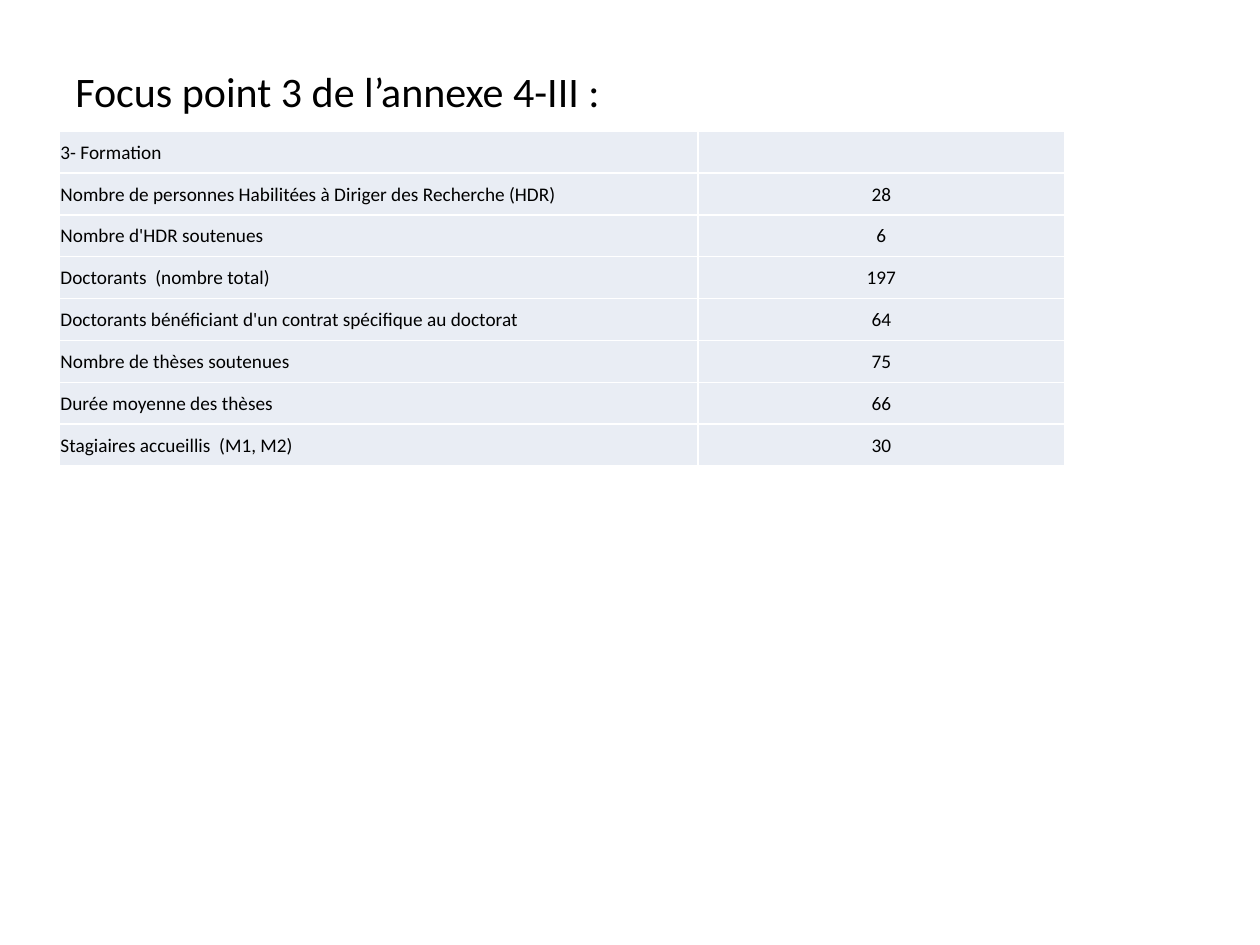
from dataclasses import dataclass

from lxml.etree import SubElement
from pptx import Presentation
from pptx.dml.color import RGBColor
from pptx.enum.text import MSO_ANCHOR, MSO_AUTO_SIZE, PP_ALIGN
from pptx.oxml.ns import qn
from pptx.util import Inches, Pt

TITLE = "Focus point 3 de l’annexe 4-III :"
INDICATORS = [
    ("3- Formation", ""),
    ("Nombre de personnes Habilitées à Diriger des Recherche (HDR)", "28"),
    ("Nombre d'HDR soutenues", "6"),
    ("Doctorants  (nombre total)", "197"),
    ("Doctorants bénéficiant d'un contrat spécifique au doctorat", "64"),
    ("Nombre de thèses soutenues", "75"),
    ("Durée moyenne des thèses", "66"),
    ("Stagiaires accueillis  (M1, M2)", "30"),
]
LEFT_ALIGNED = {0, 4}

LEFT = Inches(0.47)
TITLE_TOP, TITLE_WIDTH, TITLE_HEIGHT = Inches(0.61), Inches(4.42), Inches(0.22)
TABLE_TOP, TABLE_HEIGHT = Inches(1.04), Inches(2.66)
COLUMN_WIDTHS = [Inches(5.07), Inches(2.91)]


@dataclass(frozen=True)
class Theme:
    font: str = "Calibri"
    ink: str = "000000"
    cell: str = "E9EDF4"
    border: str = "FFFFFF"
    border_width: int = Pt(1)
    title_size: int = Pt(24)
    body_size: int = Pt(11)


THEME = Theme()


def write(paragraph, text, size, alignment):
    paragraph.alignment = alignment
    run = paragraph.add_run()
    run.text = text
    run.font.name = THEME.font
    run.font.size = size
    run.font.color.rgb = RGBColor.from_string(THEME.ink)


def add_borders(cell):
    """Outline all four sides; called before the fill, which must follow in the XML."""
    properties = cell._tc.get_or_add_tcPr()
    for side in ("lnL", "lnR", "lnT", "lnB"):
        line = SubElement(properties, qn(f"a:{side}"), w=str(THEME.border_width))
        fill = SubElement(line, qn("a:solidFill"))
        SubElement(fill, qn("a:srgbClr"), val=THEME.border)


def fill_cell(cell, text, alignment):
    add_borders(cell)
    cell.fill.solid()
    cell.fill.fore_color.rgb = RGBColor.from_string(THEME.cell)
    cell.vertical_anchor = MSO_ANCHOR.MIDDLE
    cell.margin_left = cell.margin_right = cell.margin_top = Inches(0.01)
    cell.margin_bottom = 0
    if text:
        write(cell.text_frame.paragraphs[0], text, THEME.body_size, alignment)


def add_title(slide):
    title = slide.shapes.title
    title.left, title.top = LEFT, TITLE_TOP
    title.width, title.height = TITLE_WIDTH, TITLE_HEIGHT
    frame = title.text_frame
    frame.auto_size = MSO_AUTO_SIZE.NONE
    frame.word_wrap = True
    frame.vertical_anchor = MSO_ANCHOR.MIDDLE
    write(frame.paragraphs[0], TITLE, THEME.title_size, PP_ALIGN.CENTER)


def add_indicators(slide):
    table = slide.shapes.add_table(
        len(INDICATORS), len(COLUMN_WIDTHS),
        LEFT, TABLE_TOP, sum(COLUMN_WIDTHS), TABLE_HEIGHT,
    ).table
    table.first_row = table.horz_banding = False
    for column, width in zip(table.columns, COLUMN_WIDTHS):
        column.width = width
    for row, (label, value) in enumerate(INDICATORS):
        label_alignment = PP_ALIGN.LEFT if row in LEFT_ALIGNED else PP_ALIGN.JUSTIFY
        fill_cell(table.cell(row, 0), label, label_alignment)
        fill_cell(table.cell(row, 1), value, PP_ALIGN.CENTER)


def main():
    deck = Presentation()
    deck.slide_width, deck.slide_height = Inches(10), Inches(7.5)
    slide = deck.slides.add_slide(deck.slide_layouts.get_by_name("Title Only"))
    add_title(slide)
    add_indicators(slide)
    deck.save("out.pptx")


if __name__ == "__main__":
    main()
